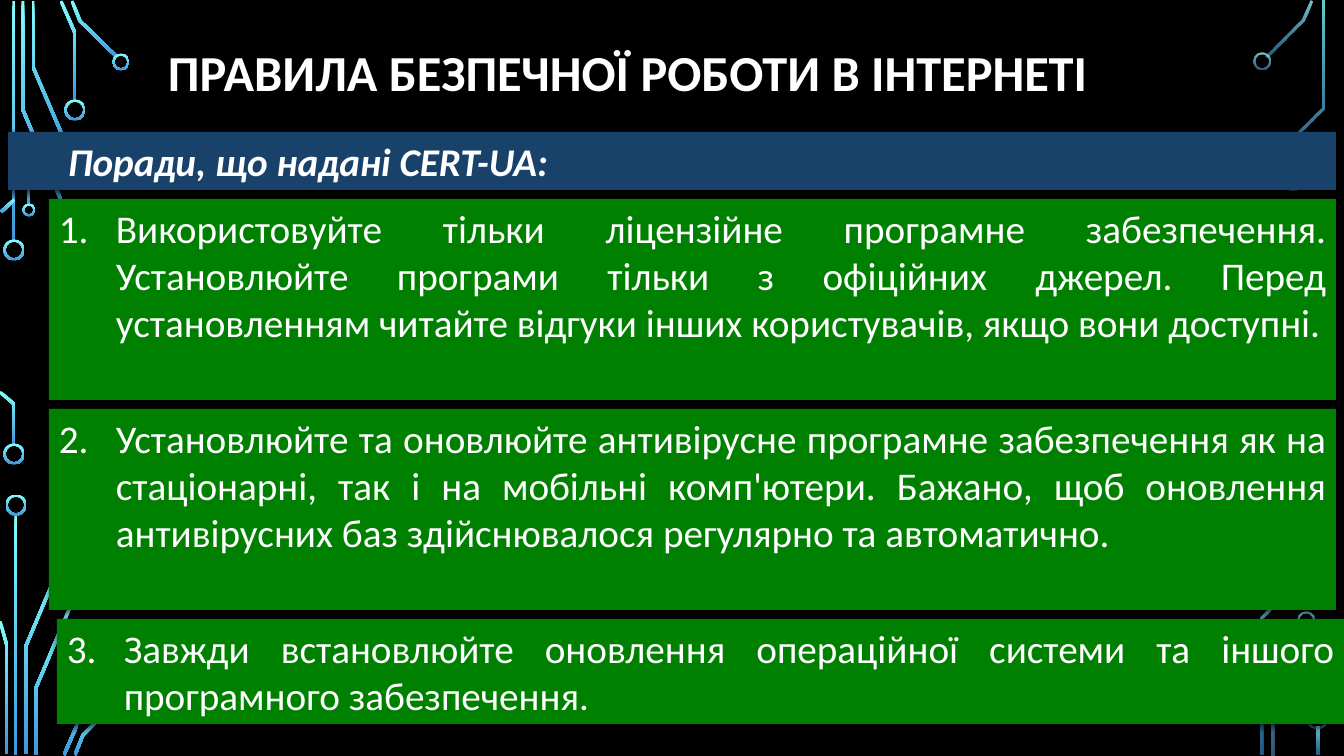
from math import hypot

from lxml.etree import SubElement
from pptx import Presentation
from pptx.dml.color import RGBColor
from pptx.enum.shapes import MSO_SHAPE as Shape
from pptx.enum.text import MSO_ANCHOR as Anchor, PP_ALIGN as Align
from pptx.oxml.ns import qn
from pptx.util import Emu, Pt

TITLE = "ПРАВИЛА БЕЗПЕЧНОЇ РОБОТИ В ІНТЕРНЕТІ"
INTRO = "Поради, що надані CERT-UA:"
# left, top, width, height, advice
RULES = [
    (49, 199, 1287, 201, "Використовуйте тільки ліцензійне програмне забезпечення. "
     "Установлюйте програми тільки з офіційних джерел. Перед установленням "
     "читайте відгуки інших користувачів, якщо вони доступні."),
    (49, 409, 1287, 201, "Установлюйте та оновлюйте антивірусне програмне забезпечення "
     "як на стаціонарні, так і на мобільні комп'ютери. Бажано, щоб оновлення "
     "антивірусних баз здійснювалося регулярно та автоматично."),
    (57, 619, 1287, 105, "Завжди встановлюйте оновлення операційної системи "
     "та іншого програмного забезпечення."),
]

# Circuit decoration: centre lines of the traces, then (centre x, centre y, diameter)
LEFT_TRACES = [
    [(14, 1), (14, 241)],
    [(23, 1), (23, 110), (61, 200)],
    [(33, 1), (33, 67), (72, 158)],
    [(61, 1), (75, 33), (75, 101)],
    [(72, 1), (80, 21), (117, 57)],
    [(1, 212), (14, 200)],
    [(0, 392), (14, 404), (14, 444)],
    [(15, 153), (29, 166), (29, 205)],
    [(16, 514), (16, 755)],
    [(64, 556), (26, 646), (26, 754)],
    [(0, 621), (7, 646), (7, 754)],
    [(74, 598), (36, 688), (36, 755)],
    [(78, 655), (78, 723), (64, 755)],
    [(119, 699), (83, 735), (75, 755)],
]
LEFT_RINGS = [(14, 250, 21), (14, 454, 21), (66, 209, 21), (75, 110, 21),
              (121, 62, 17), (29, 210, 13), (16, 505, 21)]
RIGHT_TRACES = [
    [(1311, 1), (1303, 20), (1267, 56)],
    [(1303, 628), (1273, 699), (1273, 755)],
    [(1323, 1), (1323, 108), (1292, 139), (1292, 170)],
    [(1293, 556), (1293, 588), (1262, 618), (1262, 755)],
    [(1318, 727), (1318, 755)],
]
RIGHT_RINGS = [(1262, 61, 17), (1293, 180, 21), (1306, 620, 17), (1317, 718, 21)]
CIRCUITS = [(LEFT_TRACES, LEFT_RINGS, (100, 100)),
            (RIGHT_TRACES, RIGHT_RINGS, (80, 60))]

GLOW = ("82FFFF", "3D97DE")
BLACK, WHITE, NAVY, GREEN = "000000", "FFFFFF", "19426B", "008000"
TRACE_WIDTH, RING_WIDTH = 3, 2
INTRO_INDENT, RULE_INDENT = 50, 57


def px(length):
    return Emu(round(length * 914400 / 100.8))


def color(value):
    return RGBColor.from_string(value)


def paint_glow(shape, opacities):
    """Fill from light at the top to blue at the bottom."""
    shape.shadow.inherit = False
    shape.line.fill.background()
    shape.fill.gradient()
    shape.fill.gradient_angle = 270
    for stop, value, opacity in zip(shape.fill.gradient_stops, GLOW, opacities):
        stop.color.rgb = color(value)
    if min(opacities) < 100:
        tones = shape.element.spPr.iter(qn("a:srgbClr"))
        for tone, opacity in zip(tones, opacities):
            SubElement(tone, qn("a:alpha"), val=str(opacity * 1000))


def ribbon(points, width):
    """Outline of a band of the given width around a centre line."""
    normals = []
    for (x1, y1), (x2, y2) in zip(points, points[1:]):
        length = hypot(x2 - x1, y2 - y1)
        normals.append(((y1 - y2) / length, (x2 - x1) / length))
    before, after = normals[:1] + normals, normals + normals[-1:]
    sides = [], []
    for (x, y), (ax, ay), (bx, by) in zip(points, before, after):
        reach = width / 2 / (1 + ax * bx + ay * by)
        dx, dy = (ax + bx) * reach, (ay + by) * reach
        sides[0].append((px(x + dx), px(y + dy)))
        sides[1].append((px(x - dx), px(y - dy)))
    return sides[0] + sides[1][::-1]


def add_trace(page, points, opacities):
    outline = ribbon(points, TRACE_WIDTH)
    builder = page.shapes.build_freeform(*outline[0], scale=1.0)
    builder.add_line_segments(outline[1:], close=True)
    paint_glow(builder.convert_to_shape(), opacities)


def add_ring(page, x, y, size, opacities):
    ring = page.shapes.add_shape(Shape.DONUT, px(x - size / 2), px(y - size / 2),
                                 px(size), px(size))
    ring.adjustments[0] = RING_WIDTH / size
    paint_glow(ring, opacities)


def style_text(para, size, bold=False, italic=False):
    for span in para.runs:
        font = span.font
        font.name, font.size = "Calibri", Pt(size)
        font.bold, font.italic = bold, italic
        font.color.rgb = color(WHITE)


def add_panel(page, left, top, width, height, fill, text):
    """Add a shadowed rectangle with justified text; return its paragraph."""
    panel = page.shapes.add_shape(Shape.RECTANGLE, px(left), px(top), px(width), px(height))
    panel.fill.solid()
    panel.fill.fore_color.rgb = color(fill)
    panel.line.fill.background()
    panel.shadow.inherit = False
    effects = panel.element.spPr.find(qn("a:effectLst"))
    shadow = SubElement(effects, qn("a:outerShdw"), blurRad=str(Pt(4.5)),
                        dist=str(Pt(1.5)), dir="5400000", rotWithShape="0")
    tone = SubElement(shadow, qn("a:srgbClr"), val=BLACK)
    SubElement(tone, qn("a:alpha"), val="63000")
    frame = panel.text_frame
    frame.word_wrap = True
    frame.vertical_anchor = Anchor.TOP
    frame.text = text
    para = frame.paragraphs[0]
    para.alignment = Align.JUSTIFY
    return para


def number_paragraph(para, number):
    props = para._p.get_or_add_pPr()
    props.set("marL", str(px(RULE_INDENT)))
    props.set("indent", str(-px(RULE_INDENT)))
    SubElement(props, qn("a:buFont"), typeface="+mj-lt")
    SubElement(props, qn("a:buAutoNum"), type="arabicPeriod", startAt=str(number))


def add_title(page):
    box = page.shapes.add_textbox(px(129), px(47), px(998), px(56))
    frame = box.text_frame
    frame.word_wrap = True
    frame.vertical_anchor = Anchor.MIDDLE
    frame.margin_top = frame.margin_bottom = 0
    frame.text = TITLE
    para = frame.paragraphs[0]
    para.alignment = Align.CENTER
    para.line_spacing = 0.9
    style_text(para, 36, bold=True)


def main():
    deck = Presentation()
    deck.slide_width, deck.slide_height = px(1344), px(756)
    page = deck.slides.add_slide(deck.slide_layouts[6])
    page.background.fill.solid()
    page.background.fill.fore_color.rgb = color(BLACK)

    for traces, rings, opacities in CIRCUITS:
        for points in traces:
            add_trace(page, points, opacities)
        for ring in rings:
            add_ring(page, *ring, opacities)

    add_title(page)
    intro = add_panel(page, 8, 132, 1328, 58, NAVY, INTRO)
    intro._p.get_or_add_pPr().set("indent", str(px(INTRO_INDENT)))
    style_text(intro, 28, bold=True, italic=True)
    for number, (left, top, width, height, advice) in enumerate(RULES, 1):
        para = add_panel(page, left, top, width, height, GREEN, advice)
        number_paragraph(para, number)
        style_text(para, 28)

    deck.save("out.pptx")


if __name__ == "__main__":
    main()
